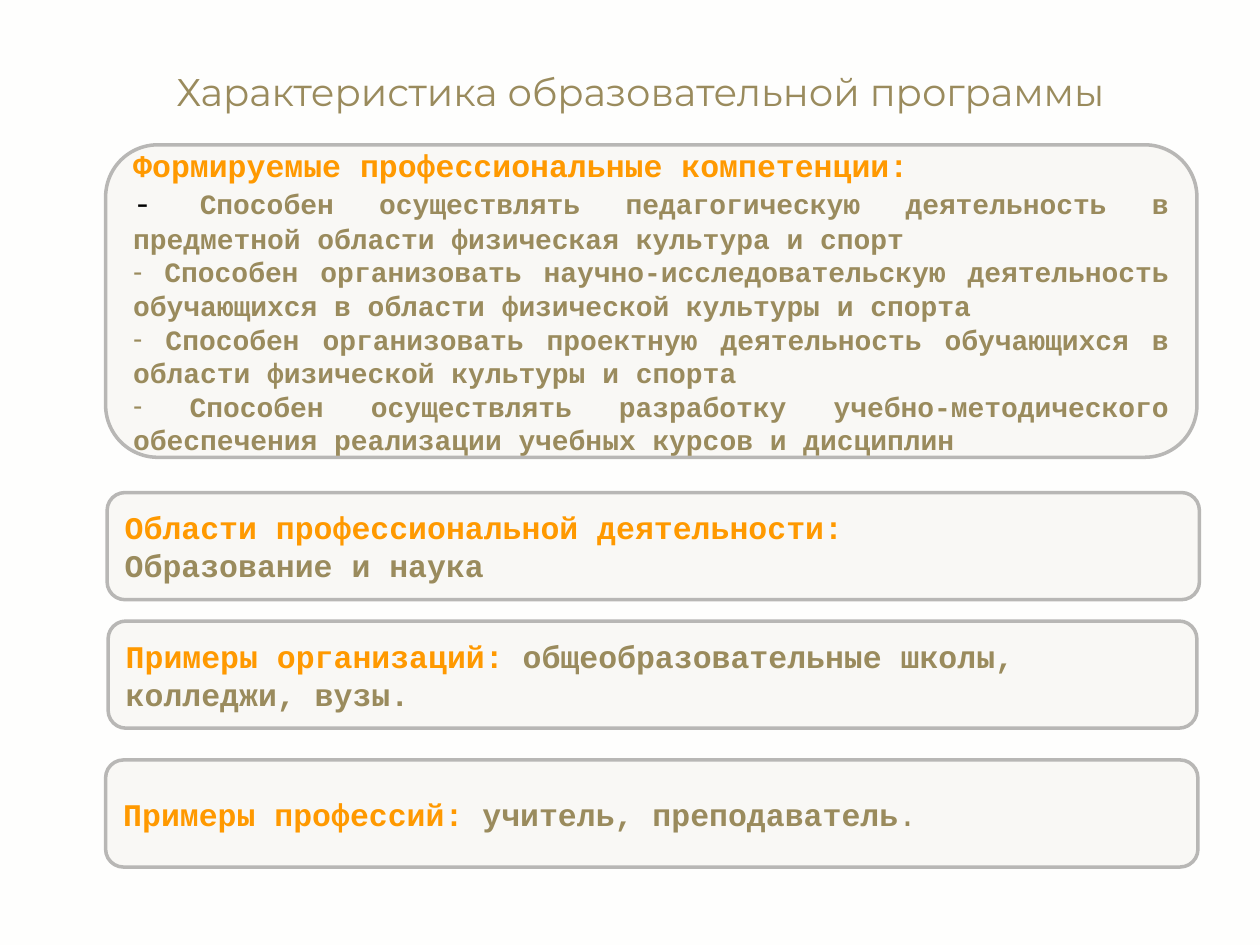
from lxml import etree
from pptx import Presentation
from pptx import util as u
from pptx.dml.color import RGBColor
from pptx.enum import shapes, text
from pptx.oxml import ns

ORANGE, OLIVE, BLACK = "FF9900", "9A8B5D", "000000"
PAPER, PANEL, BORDER = "FEFEFD", "F9F8F5", "B8B7B5"


def color(value):
    return RGBColor.from_string(value)


class Deck:
    heading_font = "Montserrat"
    body_font = "Courier New"

    def __init__(self):
        self.presentation = Presentation()
        self.presentation.slide_width = u.Cm(25.4)
        self.presentation.slide_height = u.Cm(19.05)
        self.slide = None

    def add_slide(self):
        self.slide = self.presentation.slides.add_slide(self.presentation.slide_layouts[5])
        background = self.slide.background.fill
        background.solid()
        background.fore_color.rgb = color(PAPER)

    def place(self, element, left, top, width, height):
        element.left, element.top = u.Cm(left), u.Cm(top)
        element.width, element.height = u.Cm(width), u.Cm(height)

    def run(self, paragraph, words, tint, size=18, bold=True, font=body_font):
        run = paragraph.add_run()
        run.text = words
        run.font.name = font
        run.font.size = u.Pt(size)
        run.font.bold = bold
        run.font.color.rgb = color(tint)

    def title(self, words, *box):
        title = self.slide.shapes.title
        self.place(title, *box)
        frame = title.text_frame
        frame.word_wrap = False
        frame.auto_size = text.MSO_AUTO_SIZE.NONE
        frame.vertical_anchor = text.MSO_ANCHOR.TOP
        paragraph = frame.paragraphs[0]
        paragraph.alignment = text.PP_ALIGN.LEFT
        self.run(paragraph, words, OLIVE, 22, False, self.heading_font)

    def panel(self, heading, *box):
        panel = self.slide.shapes.add_shape(
            shapes.MSO_SHAPE.ROUNDED_RECTANGLE, *(u.Cm(side) for side in box))
        panel.shadow.inherit = False
        panel.fill.solid()
        panel.fill.fore_color.rgb = color(PANEL)
        panel.line.color.rgb = color(BORDER)
        panel.line.width = u.Pt(2)
        frame = panel.text_frame
        frame.word_wrap = True
        frame.vertical_anchor = text.MSO_ANCHOR.MIDDLE
        paragraph = frame.paragraphs[0]
        paragraph.alignment = text.PP_ALIGN.LEFT
        self.run(paragraph, heading, ORANGE)
        return frame

    def paragraph(self, frame, alignment=text.PP_ALIGN.LEFT, bullet=None):
        paragraph = frame.add_paragraph()
        paragraph.alignment = alignment
        if bullet:
            properties = paragraph._p.get_or_add_pPr()
            etree.SubElement(properties, ns.qn("a:buFont"), typeface="Arial")
            etree.SubElement(properties, ns.qn("a:buChar"), char=bullet)
        return paragraph


def main():
    deck = Deck()
    deck.add_slide()
    deck.title("Характеристика образовательной программы", 3.3, 1.24, 20.98, 1.19)

    justify = text.PP_ALIGN.JUSTIFY
    competences = deck.panel("Формируемые профессиональные компетенции:", 2.13, 2.92, 22, 6.3)
    first = deck.paragraph(competences, justify)
    deck.run(first, "- ", BLACK, bold=False)
    deck.run(first, "Способен осуществлять педагогическую деятельность в предметной "
                    "области физическая культура и спорт ", OLIVE, 16)
    for competence in (
        " Способен организовать научно-исследовательскую деятельность обучающихся "
        "в области физической культуры и спорта",
        " Способен организовать проектную деятельность обучающихся "
        "в области физической культуры и спорта",
        " Способен осуществлять разработку учебно-методического обеспечения "
        "реализации учебных курсов и дисциплин",
    ):
        deck.run(deck.paragraph(competences, justify, "-"), competence, OLIVE, 16)

    areas = deck.panel("Области профессиональной деятельности:", 2.16, 9.93, 22.02, 2.16)
    deck.run(deck.paragraph(areas), "Образование и наука", OLIVE)

    employers = deck.panel("Примеры организаций: ", 2.18, 12.52, 21.95, 2.16)
    deck.run(employers.paragraphs[0], "общеобразовательные школы, колледжи, вузы.", OLIVE)

    professions = deck.panel("Примеры профессий: ", 2.13, 15.32, 22.02, 2.16)
    deck.run(professions.paragraphs[0], "учитель, преподаватель", OLIVE)
    deck.run(professions.paragraphs[0], ".", OLIVE, bold=False)

    deck.presentation.save("out.pptx")


if __name__ == "__main__":
    main()
